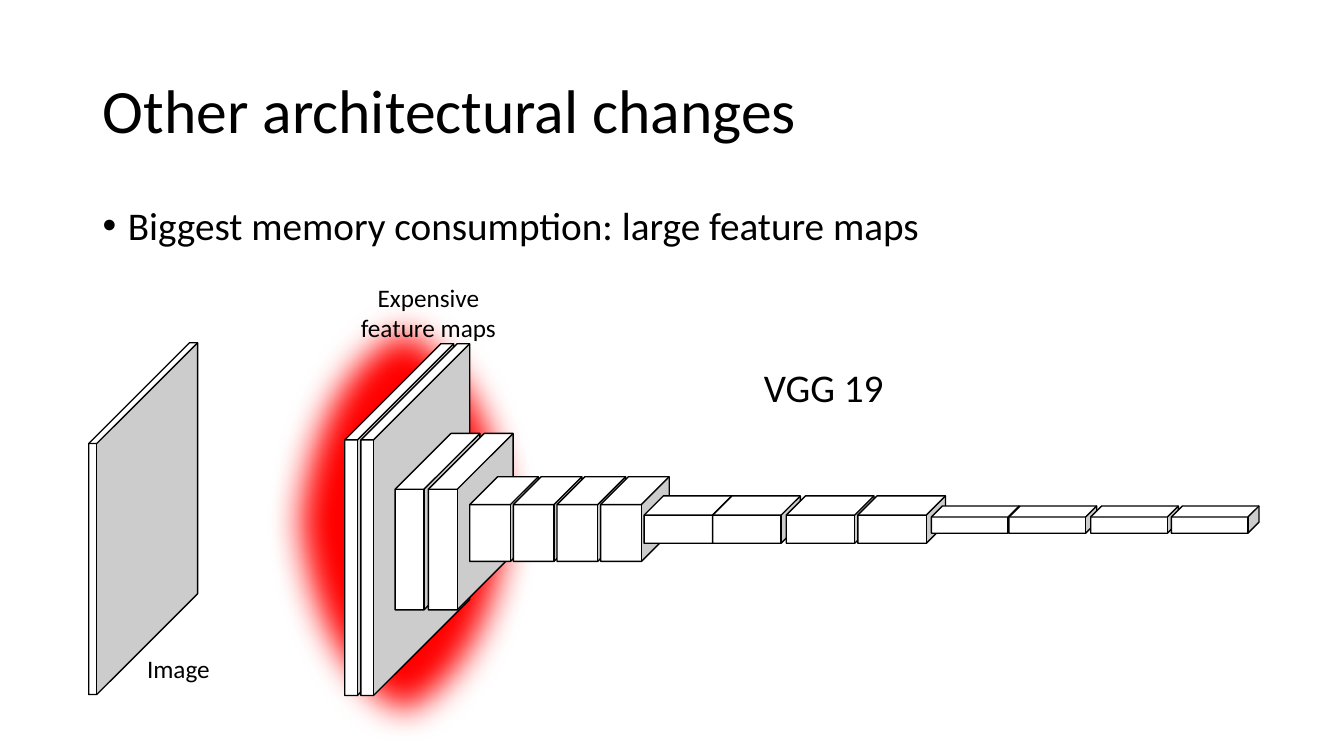
from lxml.etree import SubElement
from pptx import Presentation
from pptx.dml.color import RGBColor
from pptx.enum.shapes import MSO_SHAPE
from pptx.enum.text import MSO_ANCHOR, MSO_AUTO_SIZE, PP_ALIGN
from pptx.oxml.ns import qn
from pptx.util import Inches, Pt

COLORS = {"ink": "000000", "paper": "FFFFFF", "glow": "FF0000"}
FONT = "Calibri"
COLS, ROWS = 133.33, 75


class Deck:
    def __init__(self):
        self.deck = Presentation()
        self.deck.slide_width = Inches(13.33)
        self.deck.slide_height = Inches(7.5)
        self.slide = self.deck.slides.add_slide(self.deck.slide_layouts[5])

    def color(self, name):
        return RGBColor.from_string(COLORS[name])

    def area(self, col, row, wide, high):
        unit_x = self.deck.slide_width / COLS
        unit_y = self.deck.slide_height / ROWS
        return [round(size) for size in (col * unit_x, row * unit_y, wide * unit_x, high * unit_y)]

    def letter(self, box, text, size, align=PP_ALIGN.LEFT, anchor=MSO_ANCHOR.TOP):
        frame = box.text_frame
        frame.text = text
        frame.word_wrap = True
        frame.auto_size = MSO_AUTO_SIZE.NONE
        frame.vertical_anchor = anchor
        para = frame.paragraphs[0]
        para.alignment = align
        para.font.name = FONT
        para.font.size = Pt(size)
        para.font.color.rgb = self.color("ink")
        return para

    def title(self, text, *area):
        box = self.slide.shapes.title
        box.left, box.top, box.width, box.height = self.area(*area)
        para = self.letter(box, text, 44, anchor=MSO_ANCHOR.MIDDLE)
        para.line_spacing = 0.9

    def label(self, text, size, *area, align=PP_ALIGN.LEFT):
        box = self.slide.shapes.add_textbox(*self.area(*area))
        return self.letter(box, text, size, align)

    def bullet(self, text, *area):
        para = self.label(text, 28, *area)
        para.line_spacing = 0.9
        para.space_before = Pt(10)
        props = para._p.get_or_add_pPr()
        props.set("marL", str(Inches(0.25)))
        props.set("indent", str(-Inches(0.25)))
        SubElement(props, qn("a:buFont")).set("typeface", "Arial")
        SubElement(props, qn("a:buChar")).set("char", "•")
        props.append(props.find(qn("a:defRPr")))

    def shape(self, kind, fill, *area):
        item = self.slide.shapes.add_shape(kind, *self.area(*area))
        item.shadow.inherit = False
        item.fill.solid()
        item.fill.fore_color.rgb = self.color(fill)
        return item

    def glow(self, *area):
        oval = self.shape(MSO_SHAPE.OVAL, "glow", *area)
        oval.line.fill.background()
        effects = oval._element.spPr.find(qn("a:effectLst"))
        SubElement(effects, qn("a:softEdge")).set("rad", str(Pt(25)))

    def cube(self, depth, *area):
        block = self.shape(MSO_SHAPE.CUBE, "paper", *area)
        block.adjustments[0] = depth
        block.line.color.rgb = self.color("ink")
        block.line.width = Pt(1)

    def stage(self, starts, row, wide, high, depth):
        for col in starts:
            self.cube(depth, col, row, wide, high)

    def save(self):
        self.deck.save("out.pptx")


def main():
    deck = Deck()
    deck.title("Other architectural changes", 9.2, 4, 115, 14.5)
    deck.glow(26.2, 28.8, 27.6, 45.8)
    deck.bullet("Biggest memory consumption: large feature maps", 9.2, 20, 115, 47.6)

    stages = [
        ([34.2, 35.8], 34.1, 10.8, 34.9, 0.884),
        ([39.2, 42.5], 43, 8.4, 17.5, 0.66),
        ([46.6 + 4.33 * step for step in range(4)], 47.3, 6.8, 8.4, 0.406),
        ([63.9, 70.7, 78, 85.1], 49.2, 8.7, 4.7, 0.406),
        ([92.4, 100.1, 108.2, 116.2], 50.2, 8.7, 2.7, 0.406),
    ]
    for stage in stages:
        deck.stage(*stage)

    deck.label("VGG 19", 28, 74.8, 35.6, 32.4, 5.7)
    deck.label("Expensive feature maps", 18, 33.1, 27.5, 18.8, 7.1, align=PP_ALIGN.CENTER)
    deck.cube(0.926, 8.8, 34, 10.8, 34.9)
    deck.label("Image", 18, 8.4, 64.3, 18.6, 4, align=PP_ALIGN.CENTER)
    deck.save()


if __name__ == "__main__":
    main()
